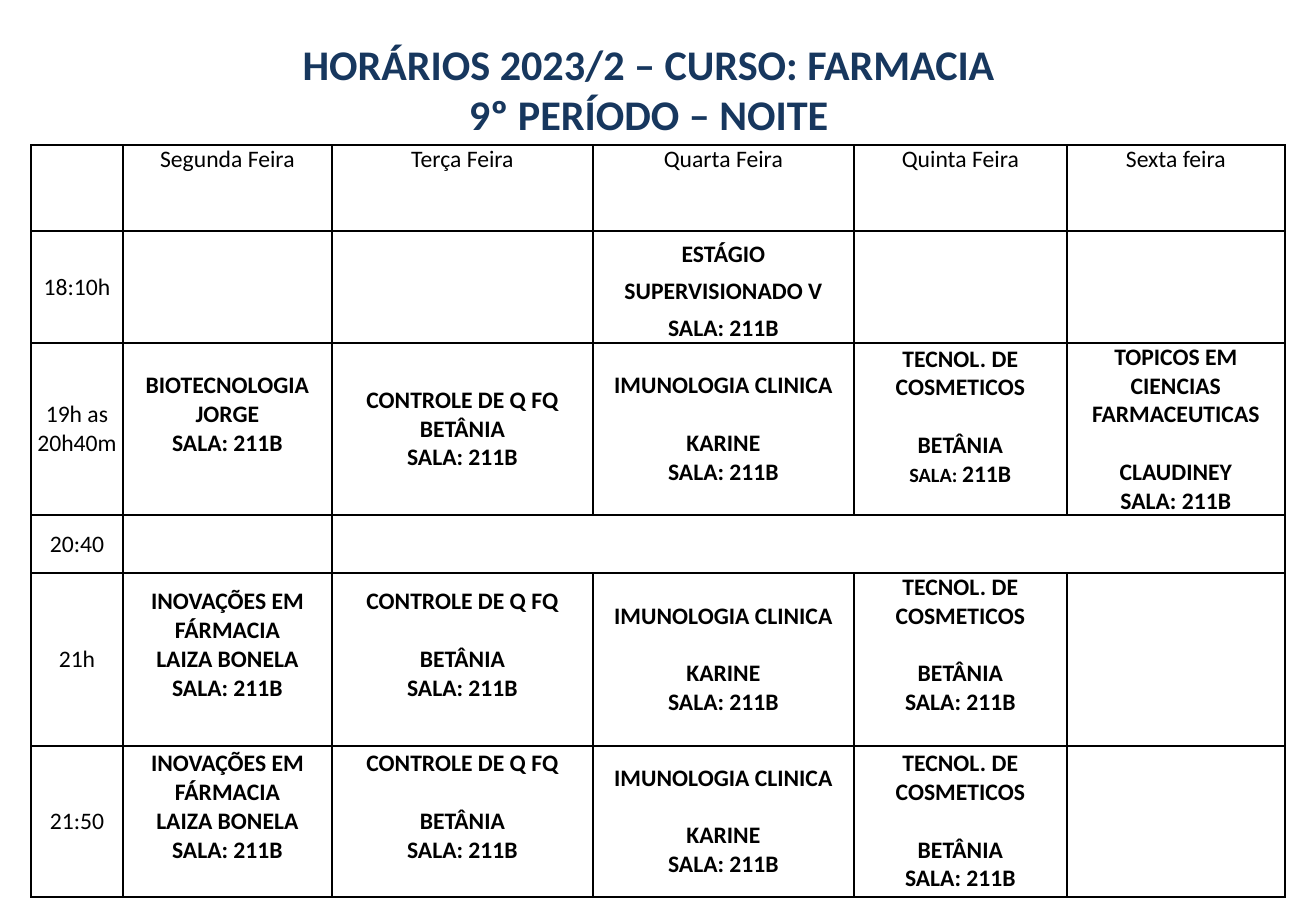
import pptx
import pptx.dml.color
import pptx.enum.text
import pptx.oxml
import pptx.oxml.ns
import pptx.util

PX = 7526  # EMU in one px
LINE = 29  # px height of one line of cell text
ROOM = "SALA: 211B"
DAYS = ["Segunda Feira", "Terça Feira", "Quarta Feira", "Quinta Feira", "Sexta feira"]
COLUMN_WIDTHS = [92, 209, 261, 261, 213, 218]
ROW_HEIGHTS = [86, 112, 172, 58, 173, 151]
TIMES = ["18:10h", "19h as 20h40m", "20:40", "21h", "21:50"]
BREAK_ROW = 3

INNOVATION = ["INOVAÇÕES EM FÁRMACIA", "LAIZA BONELA", ROOM]
QUALITY = ["CONTROLE DE Q FQ", "BETÂNIA", ROOM]
IMMUNOLOGY = ["IMUNOLOGIA CLINICA", "KARINE", ROOM]
COSMETICS = ["TECNOL. DE COSMETICOS", "BETÂNIA", ROOM]
SMALL_ROOM_COSMETICS = COSMETICS[:2] + [[("SALA: ", 12), ("211B", 14)]]
TOPICS = ["TOPICOS EM CIENCIAS FARMACEUTICAS", "CLAUDINEY", ROOM]

# (row, column, lines, gap above the teacher, lift from the cell's foot)
CLASSES = [
    (1, 3, ["ESTÁGIO SUPERVISIONADO V", ROOM], False, 0),
    (2, 1, ["BIOTECNOLOGIA", "JORGE", ROOM], False, LINE),
    (2, 2, QUALITY, False, 0),
    (2, 3, IMMUNOLOGY, True, 0),
    (2, 4, SMALL_ROOM_COSMETICS, True, 25),
    (2, 5, TOPICS, True, 0),
    (4, 1, INNOVATION, False, LINE),
    (4, 2, QUALITY, True, LINE),
    (4, 3, IMMUNOLOGY, True, 0),
    (4, 4, COSMETICS, True, LINE),
    (5, 1, INNOVATION, False, LINE),
    (5, 2, QUALITY, True, LINE),
    (5, 3, IMMUNOLOGY, True, 0),
    (5, 4, COSMETICS, True, 0),
]


def px(length):
    return pptx.util.Emu(length * PX)


def color(value):
    return pptx.dml.color.RGBColor.from_string(value)


def write(frame, lines, size=14, bold=False, ink="000000", spacing=None, gap=False):
    """Write one paragraph per line; a line is text or a list of (text, size)."""
    frame.word_wrap = True
    for index, line in enumerate(lines):
        para = frame.paragraphs[0] if index == 0 else frame.add_paragraph()
        para.alignment = pptx.enum.text.PP_ALIGN.CENTER
        if spacing:
            para.line_spacing = spacing
        if gap and index == 1:
            para.space_before = pptx.util.Pt(17)
        spans = [(line, size)] if isinstance(line, str) else line
        for text, points in spans:
            span = para.add_run()
            span.text = text
            span.font.name = Timetable.FONT
            span.font.size = pptx.util.Pt(points)
            span.font.bold = bold
            span.font.color.rgb = color(ink)


class Timetable:
    FONT = "Calibri"
    TITLE_INK = "17375E"
    BORDER = "000000"

    def __init__(self, slide):
        self.slide = slide

    def title(self, left, top, width, height, lines):
        box = self.slide.shapes.add_textbox(px(left), px(top), px(width), px(height))
        write(box.text_frame, lines, size=25, bold=True, ink=self.TITLE_INK)

    def grid(self, left, top, widths, heights):
        frame = self.slide.shapes.add_table(
            len(heights), len(widths), px(left), px(top), px(sum(widths)), px(sum(heights)))
        table = frame.table
        table.first_row = False
        table.horz_banding = False
        for column, width in zip(table.columns, widths):
            column.width = px(width)
        for row, height in zip(table.rows, heights):
            row.height = px(height)
        for cell in table.iter_cells():
            self.style_cell(cell)
        return table

    def style_cell(self, cell):
        cell.margin_left = cell.margin_right = px(5)
        cell.margin_top = cell.margin_bottom = 0
        cell.vertical_anchor = pptx.enum.text.MSO_ANCHOR.MIDDLE
        properties = cell._tc.get_or_add_tcPr()
        for side in ("lnL", "lnR", "lnT", "lnB"):
            properties.append(pptx.oxml.parse_xml(
                f'<a:{side} {pptx.oxml.ns.nsdecls("a")} w="12700"><a:solidFill>'
                f'<a:srgbClr val="{self.BORDER}"/></a:solidFill></a:{side}>'))
        cell.fill.background()


def main():
    deck = pptx.Presentation()
    deck.slide_width = px(1316)
    deck.slide_height = px(911)
    page = Timetable(deck.slides.add_slide(deck.slide_layouts[6]))
    page.title(36, 32, 1225, 114, ["HORÁRIOS 2023/2 – CURSO: FARMACIA", "9º PERÍODO – NOITE"])

    table = page.grid(31, 145, COLUMN_WIDTHS, ROW_HEIGHTS)
    table.cell(BREAK_ROW, 2).merge(table.cell(BREAK_ROW, 5))
    for column, day in enumerate(DAYS, 1):
        header = table.cell(0, column)
        header.vertical_anchor = pptx.enum.text.MSO_ANCHOR.TOP
        write(header.text_frame, [day])
    for row, time in enumerate(TIMES, 1):
        write(table.cell(row, 0).text_frame, [time])
    for row, column, lines, gap, lift in CLASSES:
        cell = table.cell(row, column)
        cell.margin_bottom = px(lift)
        write(cell.text_frame, lines, bold=True, gap=gap, spacing=1.3 if row == 1 else None)

    deck.save("out.pptx")


if __name__ == "__main__":
    main()
